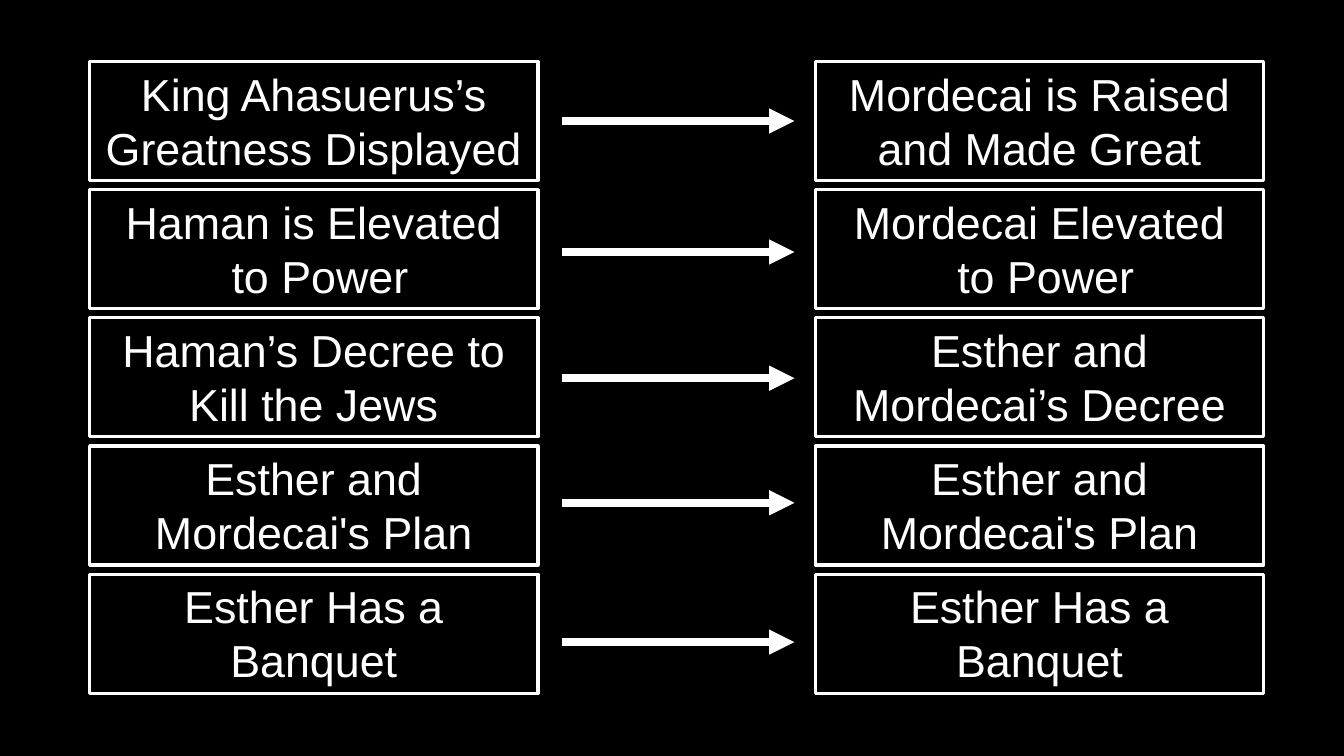
from dataclasses import dataclass

from lxml import etree
from pptx import Presentation
from pptx.dml.color import RGBColor
from pptx.enum.shapes import MSO_CONNECTOR
from pptx.enum.text import MSO_ANCHOR, MSO_AUTO_SIZE, PP_ALIGN
from pptx.oxml.ns import qn
from pptx.slide import Slide
from pptx.util import Cm, Pt

STRAIGHT = MSO_CONNECTOR.STRAIGHT
TOP = MSO_ANCHOR.TOP
GROW = MSO_AUTO_SIZE.SHAPE_TO_FIT_TEXT
CENTER = PP_ALIGN.CENTER
BLANK_LAYOUT = 6


@dataclass(frozen=True)
class Theme:
    background: RGBColor = RGBColor(0x00, 0x00, 0x00)
    ink: RGBColor = RGBColor(0xFF, 0xFF, 0xFF)
    font: str = "Arial"
    event_size: Pt = Pt(32)
    border: Pt = Pt(2.25)
    arrow: Pt = Pt(6)


@dataclass(frozen=True)
class Reversal:
    """An early event, its later mirror and the height of the arrow in cm."""
    before: str
    after: str
    arrow_y: float


THEME = Theme()

# Layout in cm
BEFORE_LEFT, AFTER_LEFT = 2.26, 20.55
FIRST_TOP, ROW_PITCH = 1.55, 3.23
EVENT_WIDTH, EVENT_HEIGHT = 11.3, 3.0
ARROW_START, ARROW_END = 14.17, 20.02

REVERSALS = [
    Reversal("King Ahasuerus’s Greatness Displayed",
             "Mordecai is Raised and Made Great", 3.05),
    Reversal("Haman is Elevated\n to Power", "Mordecai Elevated\n to Power", 6.35),
    Reversal("Haman’s Decree to Kill the Jews", "Esther and Mordecai’s Decree", 9.53),
    Reversal("Esther and Mordecai's Plan", "Esther and Mordecai's Plan", 12.67),
    Reversal("Esther Has a Banquet", "Esther Has a Banquet", 16.18),
]

FRAME_FORMAT = {"word_wrap": True, "auto_size": GROW, "vertical_anchor": TOP}
FONT_FORMAT = {"name": THEME.font, "size": THEME.event_size}


def draw_event(slide: Slide, text: str, left: float, top: float) -> None:
    event = slide.shapes.add_textbox(Cm(left), Cm(top), Cm(EVENT_WIDTH), Cm(EVENT_HEIGHT))
    event.line.color.rgb = THEME.ink
    event.line.width = THEME.border
    frame = event.text_frame
    for attribute, value in FRAME_FORMAT.items():
        setattr(frame, attribute, value)
    frame.text = text
    for paragraph in frame.paragraphs:
        paragraph.alignment = CENTER
        for run in paragraph.runs:
            for attribute, value in FONT_FORMAT.items():
                setattr(run.font, attribute, value)
            run.font.color.rgb = THEME.ink


def draw_arrow(slide: Slide, y: float) -> None:
    arrow = slide.shapes.add_connector(
        STRAIGHT, Cm(ARROW_START), Cm(y), Cm(ARROW_END), Cm(y))
    arrow.line.color.rgb = THEME.ink
    arrow.line.width = THEME.arrow
    # Arrowhead and no shadow
    etree.SubElement(arrow.line._get_or_add_ln(), qn("a:tailEnd"), type="triangle")
    etree.SubElement(arrow._element.spPr, qn("a:effectLst"))


def main() -> None:
    deck = Presentation()
    deck.slide_width, deck.slide_height = Cm(33.87), Cm(19.05)
    slide = deck.slides.add_slide(deck.slide_layouts[BLANK_LAYOUT])

    # Background
    backdrop = slide.background.fill
    backdrop.solid()
    backdrop.fore_color.rgb = THEME.background

    # Rows of paired events
    for row, reversal in enumerate(REVERSALS):
        top = FIRST_TOP + row * ROW_PITCH
        draw_event(slide, reversal.before, BEFORE_LEFT, top)
        draw_event(slide, reversal.after, AFTER_LEFT, top)
        draw_arrow(slide, reversal.arrow_y)

    deck.save("out.pptx")


if __name__ == "__main__":
    main()
